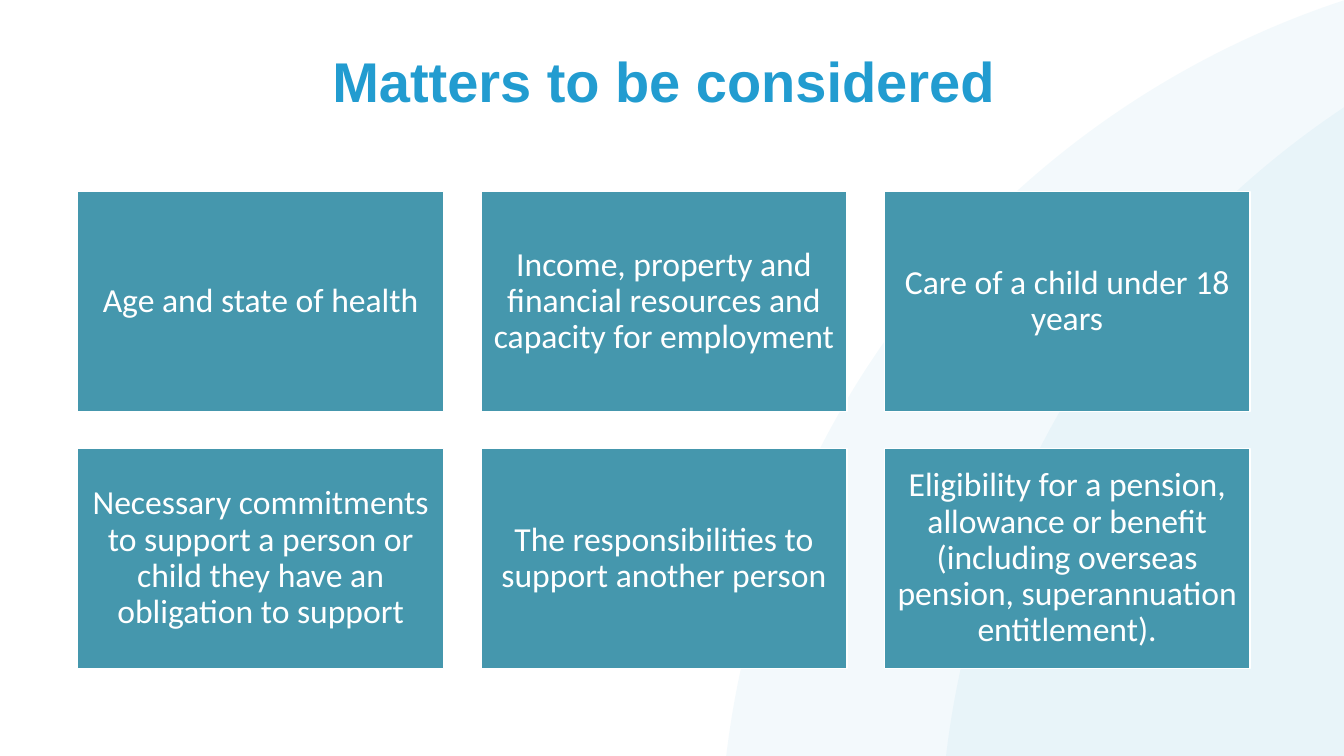
from lxml import etree
from pptx import Presentation
from pptx import util as u
from pptx.dml import color
from pptx.enum import shapes, text
from pptx.oxml import ns

BLUE, TEAL, WHITE = "229CD0", "4597AD", "FFFFFF"

MATTERS = [
    "Age and state of health",
    "Income, property and financial resources and capacity for employment",
    "Care of a child under 18 years",
    "Necessary commitments to support a person or child they have an obligation to support",
    "The responsibilities to support another person",
    "Eligibility for a pension, allowance or benefit "
    "(including overseas pension, superannuation entitlement).",
]
COLUMNS = 3
LEFT, TOP = 0.77, 1.9
CARD_WIDTH, CARD_HEIGHT = 3.63, 2.18
GAP = 0.37


def rgb(value):
    return color.RGBColor.from_string(value)


class SlideBuilder:
    def __init__(self, deck):
        self.page = deck.slides.add_slide(deck.slide_layouts[5])
        self.page.background.fill.solid()
        self.page.background.fill.fore_color.rgb = rgb(WHITE)

    def add_text(self, frame, wording, font, size, ink, bold=False):
        frame.word_wrap = True
        frame.auto_size = text.MSO_AUTO_SIZE.NONE
        para = frame.paragraphs[0]
        para.alignment = text.PP_ALIGN.CENTER
        para.line_spacing = 0.9
        span = para.add_run()
        span.text = wording
        span.font.name = font
        span.font.size = u.Pt(size)
        span.font.bold = bold
        span.font.color.rgb = rgb(ink)

    def shape(self, kind, left, top, width, height, fill):
        box = self.page.shapes.add_shape(
            kind, u.Inches(left), u.Inches(top), u.Inches(width), u.Inches(height))
        box.shadow.inherit = False
        box.fill.solid()
        box.fill.fore_color.rgb = rgb(fill)
        return box

    def disc(self, left, top, size, opacity):
        """Add a translucent circle; opacity is a percentage."""
        circle = self.shape(shapes.MSO_SHAPE.OVAL, left, top, size, size, BLUE)
        circle.line.fill.background()
        tint = circle.element.spPr.find(ns.qn("a:solidFill"))[0]
        etree.SubElement(tint, ns.qn("a:alpha"), val=str(opacity * 1000))

    def title(self, wording):
        """Fill the title placeholder and bring it in front of the discs."""
        box = self.page.shapes.title
        box.left, box.top = u.Inches(LEFT), u.Inches(0.49)
        box.width, box.height = u.Inches(11.62), u.Inches(0.97)
        box.text_frame.vertical_anchor = text.MSO_ANCHOR.TOP
        self.add_text(box.text_frame, wording, "Arial", 40, BLUE, bold=True)
        box.element.getparent().append(box.element)

    def card(self, left, top, wording):
        box = self.shape(
            shapes.MSO_SHAPE.RECTANGLE, left, top, CARD_WIDTH, CARD_HEIGHT, TEAL)
        box.line.color.rgb = rgb(WHITE)
        box.line.width = u.Pt(1)
        frame = box.text_frame
        frame.vertical_anchor = text.MSO_ANCHOR.MIDDLE
        frame.margin_left = frame.margin_right = u.Inches(0.1)
        frame.margin_top = frame.margin_bottom = u.Inches(0.1)
        self.add_text(frame, wording, "Calibri", 24, WHITE)


def main():
    deck = Presentation()
    deck.slide_width, deck.slide_height = u.Inches(13.33), u.Inches(7.5)
    builder = SlideBuilder(deck)
    for left in (7.14, 9.32):
        builder.disc(left, -0.45, 18.02, opacity=5)
    builder.title("Matters to be considered")
    for index, matter in enumerate(MATTERS):
        row, column = divmod(index, COLUMNS)
        builder.card(LEFT + column * (CARD_WIDTH + GAP),
                     TOP + row * (CARD_HEIGHT + GAP), matter)
    deck.save("out.pptx")


if __name__ == "__main__":
    main()
